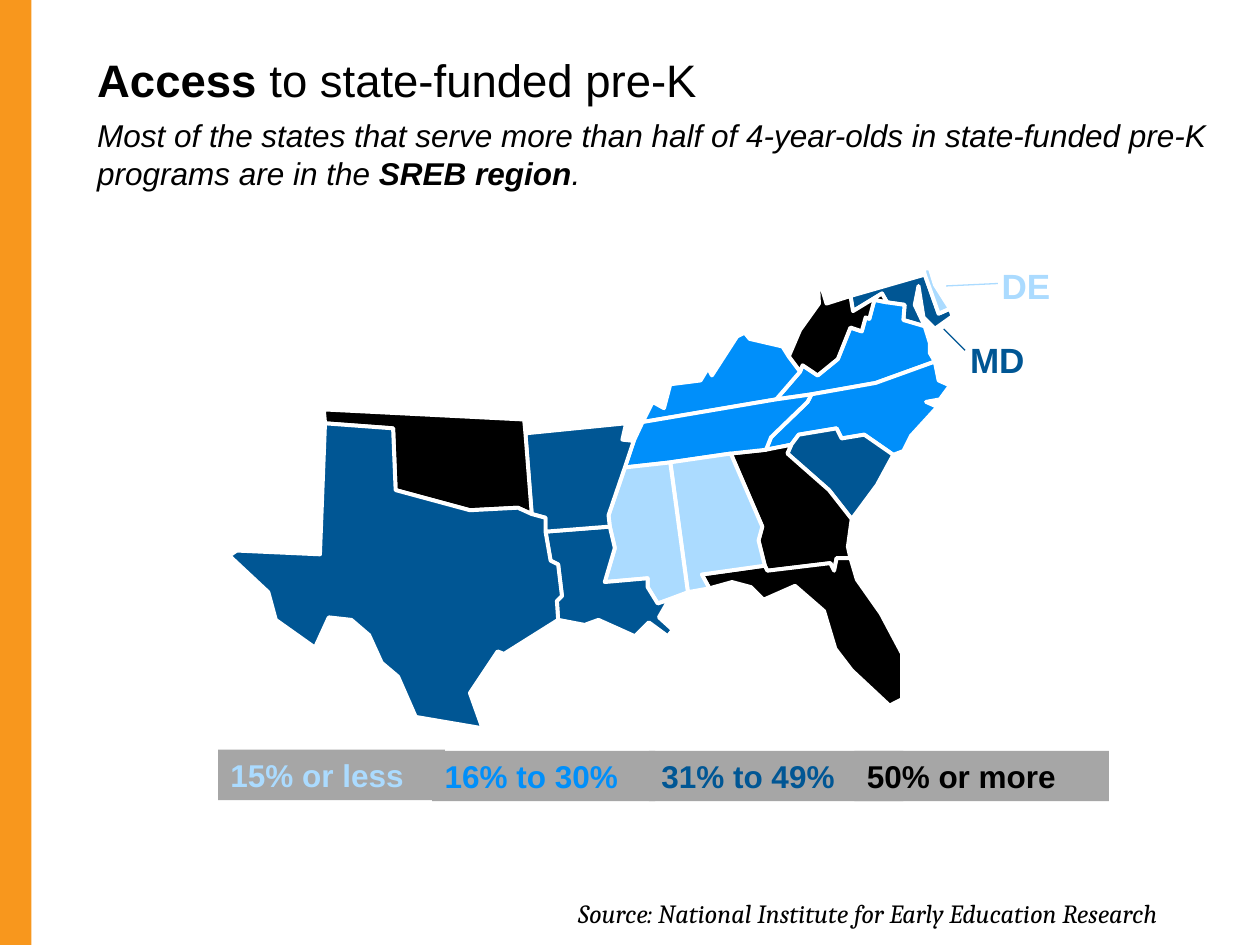
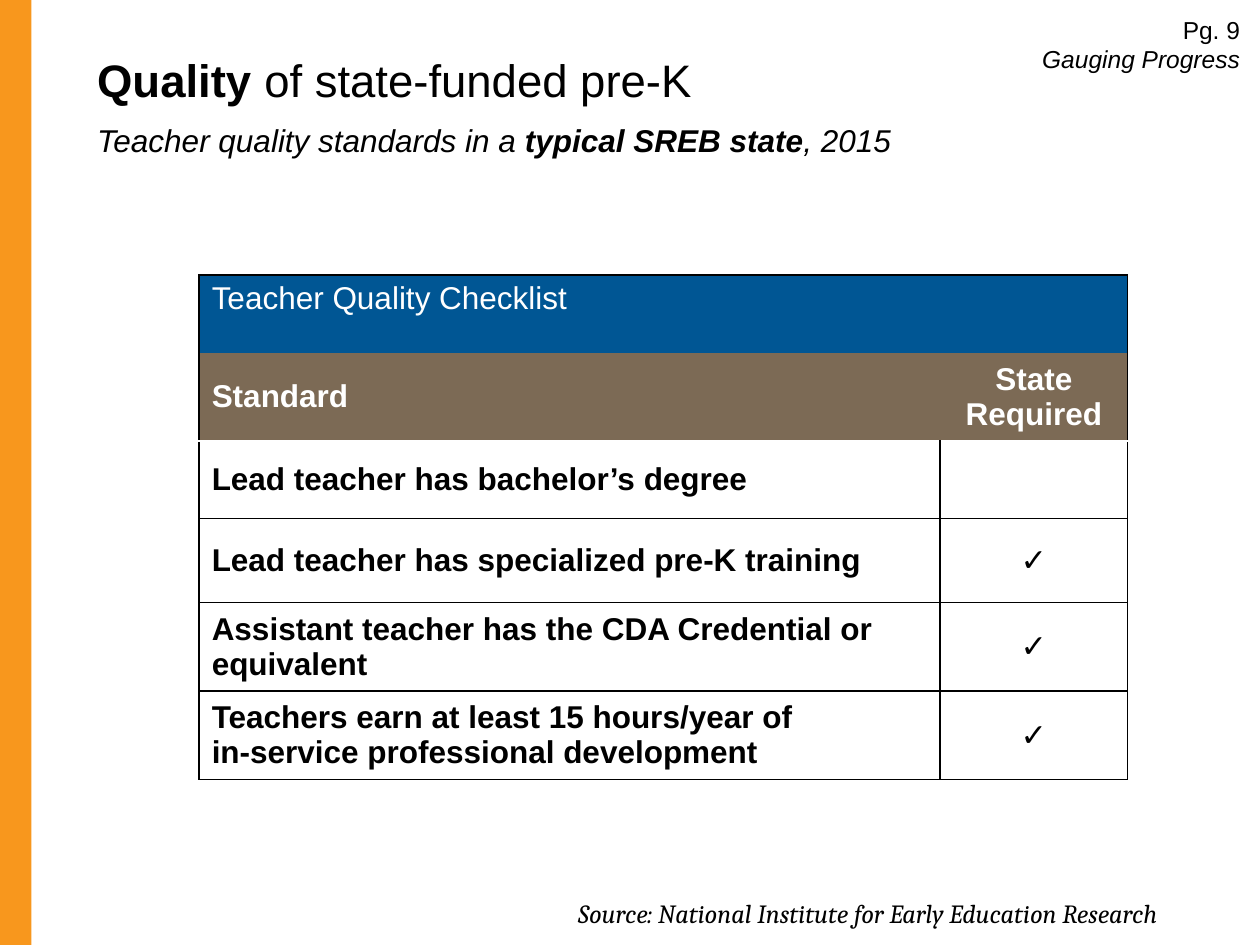
"""Build two slides on access to and quality of state-funded pre-K."""
from lxml.etree import SubElement
from pptx import Presentation
from pptx.dml.color import RGBColor
from pptx.enum.shapes import MSO_CONNECTOR, MSO_SHAPE
from pptx.enum.text import MSO_ANCHOR, MSO_AUTO_SIZE, PP_ALIGN
from pptx.oxml.ns import qn
from pptx.util import Pt

COLORS = {
    "band": "F8971D", "ink": "000000", "paper": "FFFFFF", "legend": "A6A6A6", "taupe": "7C6A55",
    "lowest": "ABDBFF", "low": "008FFA", "middle": "005694", "high": "000000",
}
SLIDE_WIDTH, SLIDE_HEIGHT = 720, 540
BAND_WIDTH = 18
MAP_UNIT = 0.72

ACCESS = {
    "title": [("Access ", "b"), ("to state-funded pre-K", "")],
    "subtitle": [
        ("Most of the states that serve more than half of 4-year-olds in state-funded pre-K "
         "programs are in the ", "i"), ("SREB region", "bi"), (".", "i")],
    "subtitle_top": 66.25,
}
QUALITY = {
    "title": [("Quality ", "b"), ("of state-funded pre-K", "")],
    "subtitle": [("Teacher quality standards in a ", "i"), ("typical SREB state", "bi"), (", 2015", "i")],
    "subtitle_top": 69,
}
SOURCE = [("Source: National Institute for Early Education Research", "i")]
PAGE_NOTE = [[("Pg. 9", "")], [("Gauging Progress", "i")]]

CORNERS = {
    "panhandle": (258, 336), "ozark": (417, 344), "redriver": (422, 408), "texarkana": (433, 422),
    "sabine": (443, 492), "delta": (484, 418), "pearl": (522, 479), "mobile": (546, 470),
    "memphis": (496, 371), "missouri": (503, 350), "corinth": (532, 367), "lookout": (580, 360),
    "ducktown": (608, 357), "perdido": (557, 456), "seminole": (607, 449), "stmarys": (675, 443),
    "savannah": (676, 412), "chattooga": (628, 353), "calabash": (709, 361), "currituck": (742, 287),
    "bristol": (644, 313), "gap": (616, 317), "cairo": (510, 335), "breaks": (635, 295),
    "huntington": (626, 283), "keyser": (675, 235), "harpers": (704, 240), "potomac": (734, 259),
    "fenwick": (754, 245), "newark": (734, 218), "henlopen": (742, 226),
}
BORDERS = {
    ("panhandle", "redriver"): [(312, 340), (314, 389), (373, 405), (411, 403)],
    ("panhandle", "ozark"): [(257, 325), (416, 333)],
    ("redriver", "texarkana"): [(433, 411)],
    ("texarkana", "sabine"): [(437, 445), (443, 448), (446, 473), (442, 477)],
    ("sabine", "panhandle"): [
        (400, 519), (395, 517), (373, 550), (383, 578), (330, 569), (316, 537), (303, 526), (293, 504),
        (279, 492), (261, 490), (250, 514), (219, 492), (213, 470), (182, 441), (188, 437), (254, 440)],
    ("ozark", "missouri"): [(497, 336), (494, 349)],
    ("memphis", "delta"): [(483, 409)],
    ("delta", "pearl"): [(488, 435), (480, 462), (514, 459), (514, 466)],
    ("pearl", "sabine"): [
        (531, 476), (523, 490), (534, 500), (530, 505), (515, 494), (504, 505), (475, 492), (464, 496)],
    ("lookout", "seminole"): [(605, 418), (602, 429)],
    ("perdido", "mobile"): [(563, 467)],
    ("bristol", "ducktown"): [(641, 319), (612, 347)],
    ("cairo", "huntington"): [
        (518, 319), (527, 324), (532, 305), (556, 302), (562, 292), (565, 298), (585, 267), (591, 264),
        (595, 269), (621, 275)],
    ("breaks", "harpers"): [
        (637, 290), (649, 298), (665, 285), (675, 260), (684, 263), (687, 252), (690, 253), (694, 238)],
    ("huntington", "keyser"): [(635, 262), (650, 241), (649, 218), (656, 241)],
    ("keyser", "harpers"): [(677, 247), (700, 233)],
    ("harpers", "potomac"): [(718, 242), (717, 254)],
    ("potomac", "fenwick"): [(726, 242), (729, 227), (733, 252), (742, 261), (756, 251)],
    ("fenwick", "newark"): [(745, 249)],
    ("newark", "henlopen"): [(733, 213), (738, 213)],
    ("potomac", "currituck"): [(738, 272), (738, 280)],
    ("currituck", "bristol"): [(695, 304)],
    ("currituck", "calabash"): [(745, 302), (754, 306), (746, 317), (735, 319), (744, 323), (723, 346), (717, 358)],
    ("calabash", "chattooga"): [(686, 345), (668, 348), (664, 340), (634, 345)],
    ("chattooga", "savannah"): [(625, 360), (658, 389)],
    ("savannah", "calabash"): [(696, 385)],
    ("savannah", "stmarys"): [(673, 434)],
    ("stmarys", "seminole"): [(664, 443), (662, 453), (659, 447), (609, 453)],
    ("stmarys", "perdido"): [
        (680, 460), (699, 487), (716, 519), (716, 555), (706, 560), (676, 532), (663, 515), (654, 485),
        (631, 465), (606, 476), (596, 466), (581, 462), (563, 467)],
}
STATES = {
    "Maryland": ("middle", "keyser harpers potomac fenwick newark"),
    "Delaware": ("lowest", "newark henlopen fenwick"),
    "Virginia": ("low", "potomac harpers breaks gap bristol currituck"),
    "North Carolina": ("low", "currituck bristol ducktown chattooga calabash"),
    "South Carolina": ("middle", "calabash chattooga savannah"),
    "Georgia": ("high", "stmarys savannah chattooga ducktown lookout seminole"),
    "Florida": ("high", "stmarys seminole perdido"),
    "West Virginia": ("high", "keyser harpers breaks huntington"),
    "Kentucky": ("low", "huntington breaks gap cairo"),
    "Tennessee": ("low", "cairo gap bristol ducktown lookout corinth memphis missouri"),
    "Alabama": ("lowest", "lookout seminole perdido mobile corinth"),
    "Mississippi": ("lowest", "corinth mobile pearl delta memphis"),
    "Louisiana": ("middle", "texarkana delta pearl sabine"),
    "Arkansas": ("middle", "ozark missouri memphis delta texarkana redriver"),
    "Oklahoma": ("high", "panhandle ozark redriver"),
    "Texas": ("middle", "panhandle redriver texarkana sabine"),
}
CALLOUTS = [
    ("MD", "middle", (547.2, 190, 46, 31.7), (539.3, 188, 551.5, 200.2)),
    ("DE", "lowest", (565.2, 147.6, 42.5, 31.7), (570.2, 162, 540.7, 163.4)),
]
LEGEND = [
    ("31% to 49%", "middle", (370.8, 429.1, 145.4, 28.8)),
    ("16% to 30%", "low", (247, 429.1, 127.4, 28.8)),
    ("15% or less", "lowest", (124.6, 428.4, 129.6, 28.8)),
    ("50% or more", "high", (488.2, 429.1, 145.4, 28.8)),
]
CHECKLIST = [
    ("Teacher Quality Checklist", ""),
    ("Standard", "State Required"),
    ("Lead teacher has bachelor’s degree", ""),
    ("Lead teacher has specialized pre-K training", "✓"),
    ("Assistant teacher has the CDA Credential or equivalent", "✓"),
    ("Teachers earn at least 15 hours/year of\vin-service professional development", "✓"),
]
CHECKLIST_FILLS = ["middle", "taupe"]
COLUMN_WIDTHS = [423.4, 107.2]
ROW_HEIGHTS = [44.5, 50, 44.5, 48, 50.5, 50.5]


def color(name):
    return RGBColor.from_string(COLORS[name])


def points(*lengths):
    return [Pt(length) for length in lengths]


def write(frame, paragraphs, size=18, font="Arial", ink="ink", align=PP_ALIGN.LEFT,
          anchor=None, insets=None, wrap=None, fit=None):
    """Fill a text frame with paragraphs of (text, style) runs."""
    if anchor is not None:
        frame.vertical_anchor = anchor
    if insets is not None:
        frame.margin_left, frame.margin_top, frame.margin_right, frame.margin_bottom = points(*insets)
    if wrap is not None:
        frame.word_wrap = wrap
    if fit is not None:
        frame.auto_size = fit
    for index, runs in enumerate(paragraphs):
        paragraph = frame.add_paragraph() if index else frame.paragraphs[0]
        paragraph.alignment = align
        paragraph.space_before = Pt(0)
        for text, style in runs:
            for position, line in enumerate(text.split("\v")):
                if position:
                    paragraph.add_line_break()
                run = paragraph.add_run()
                run.text = line
                run.font.size, run.font.name = Pt(size), font
                run.font.bold, run.font.italic = "b" in style, "i" in style
                run.font.color.rgb = color(ink)


def add_label(slide, box, paragraphs, wrap=False, **text_format):
    label = slide.shapes.add_textbox(*points(*box))
    write(label.text_frame, paragraphs, wrap=wrap, fit=MSO_AUTO_SIZE.SHAPE_TO_FIT_TEXT, **text_format)


def add_block(slide, box, fill):
    block = slide.shapes.add_shape(MSO_SHAPE.RECTANGLE, *points(*box))
    block.shadow.inherit = False
    block.fill.solid()
    block.fill.fore_color.rgb = color(fill)
    block.line.fill.background()
    return block


def add_band_to_master(deck, slide):
    band = add_block(slide, (0, 0, BAND_WIDTH, SLIDE_HEIGHT), "band")
    deck.slide_master.shapes.element.insert(2, band.element)


def add_slide(deck, content):
    slide = deck.slides.add_slide(deck.slide_layouts[0])
    title, subtitle = slide.placeholders
    for part, runs, box, size, insets in (
        (title, content["title"], (55.5, 29.5, 648, 72), 26, (0, 0, 0, 3.6)),
        (subtitle, content["subtitle"], (55.5, content["subtitle_top"], 648, 60.5), 18, (0, 0, 0, 0)),
    ):
        part.left, part.top, part.width, part.height = points(*box)
        write(part.text_frame, [runs], size=size, insets=insets, anchor=MSO_ANCHOR.TOP,
              wrap=True, fit=MSO_AUTO_SIZE.NONE)
    add_label(slide, (323.3, 509, 396.7, 25.2), [SOURCE], size=15, font="Cambria")
    return slide


def trace(corners):
    outline = []
    for start, end in zip(corners, corners[1:] + corners[:1]):
        between = BORDERS.get((start, end)) or BORDERS.get((end, start), [])[::-1]
        outline += [CORNERS[start], *between]
    return outline


def add_state(slide, tier, outline):
    builder = slide.shapes.build_freeform(*outline[0], scale=Pt(MAP_UNIT))
    builder.add_line_segments(outline[1:], close=True)
    state = builder.convert_to_shape()
    state.shadow.inherit = False
    state.fill.solid()
    state.fill.fore_color.rgb = color(tier)
    state.line.color.rgb = color("paper")
    state.line.width = Pt(2.25)


def add_leader(slide, ends, tier):
    leader = slide.shapes.add_connector(MSO_CONNECTOR.STRAIGHT, *points(*ends))
    leader.line.color.rgb = color(tier)
    leader.line.width = Pt(0.75)
    SubElement(leader.element.spPr, qn("a:effectLst"))


def add_map(slide):
    for tier, corners in STATES.values():
        add_state(slide, tier, trace(corners.split()))
    for state, tier, box, ends in CALLOUTS:
        add_label(slide, box, [[(state, "b")]], size=20, ink=tier)
        add_leader(slide, ends, tier)
    for share, tier, box in LEGEND:
        block = add_block(slide, box, "legend")
        write(block.text_frame, [[(share, "b")]], ink=tier, anchor=MSO_ANCHOR.TOP, wrap=True)


def set_borders(cell, row, column):
    top = {0: "ink", 1: None, 2: "paper"}.get(row, "ink")
    bottom = {0: None, 1: "paper"}.get(row, "ink")
    left = None if row < 2 and column == 1 else "ink"
    right = None if row == 1 and column == 0 else "ink"
    properties = cell._tc.get_or_add_tcPr()
    for side, ink in (("L", left), ("R", right), ("T", top), ("B", bottom)):
        border = SubElement(properties, qn(f"a:ln{side}"), w=str(Pt(1)))
        if ink is None:
            SubElement(border, qn("a:noFill"))
        else:
            SubElement(SubElement(border, qn("a:solidFill")), qn("a:srgbClr"), val=COLORS[ink])


def add_checklist(slide):
    box = (113.8, 157, sum(COLUMN_WIDTHS), sum(ROW_HEIGHTS))
    checklist = slide.shapes.add_table(len(CHECKLIST), len(COLUMN_WIDTHS), *points(*box)).table
    checklist.first_row = checklist.horz_banding = False
    for column, width in zip(checklist.columns, COLUMN_WIDTHS):
        column.width = Pt(width)
    checklist.cell(0, 0).merge(checklist.cell(0, 1))
    for row, texts in enumerate(CHECKLIST):
        checklist.rows[row].height = Pt(ROW_HEIGHTS[row])
        heading = row < len(CHECKLIST_FILLS)
        for column, text in enumerate(texts):
            cell = checklist.cell(row, column)
            set_borders(cell, row, column)
            if heading:
                cell.fill.solid()
                cell.fill.fore_color.rgb = color(CHECKLIST_FILLS[row])
            else:
                cell.fill.background()
            cell.vertical_anchor = MSO_ANCHOR.MIDDLE if row else MSO_ANCHOR.TOP
            if text:
                write(cell.text_frame, [[(text, "b" if row else "")]],
                      ink="paper" if heading else "ink",
                      align=PP_ALIGN.CENTER if column else PP_ALIGN.LEFT)


def main():
    deck = Presentation()
    deck.slide_width, deck.slide_height = points(SLIDE_WIDTH, SLIDE_HEIGHT)
    access = add_slide(deck, ACCESS)
    add_band_to_master(deck, access)
    add_map(access)
    quality = add_slide(deck, QUALITY)
    add_checklist(quality)
    add_label(quality, (578.2, 5, 137.5, 41), PAGE_NOTE, wrap=True, size=14, align=PP_ALIGN.RIGHT)
    deck.save("out.pptx")


if __name__ == "__main__":
    main()
